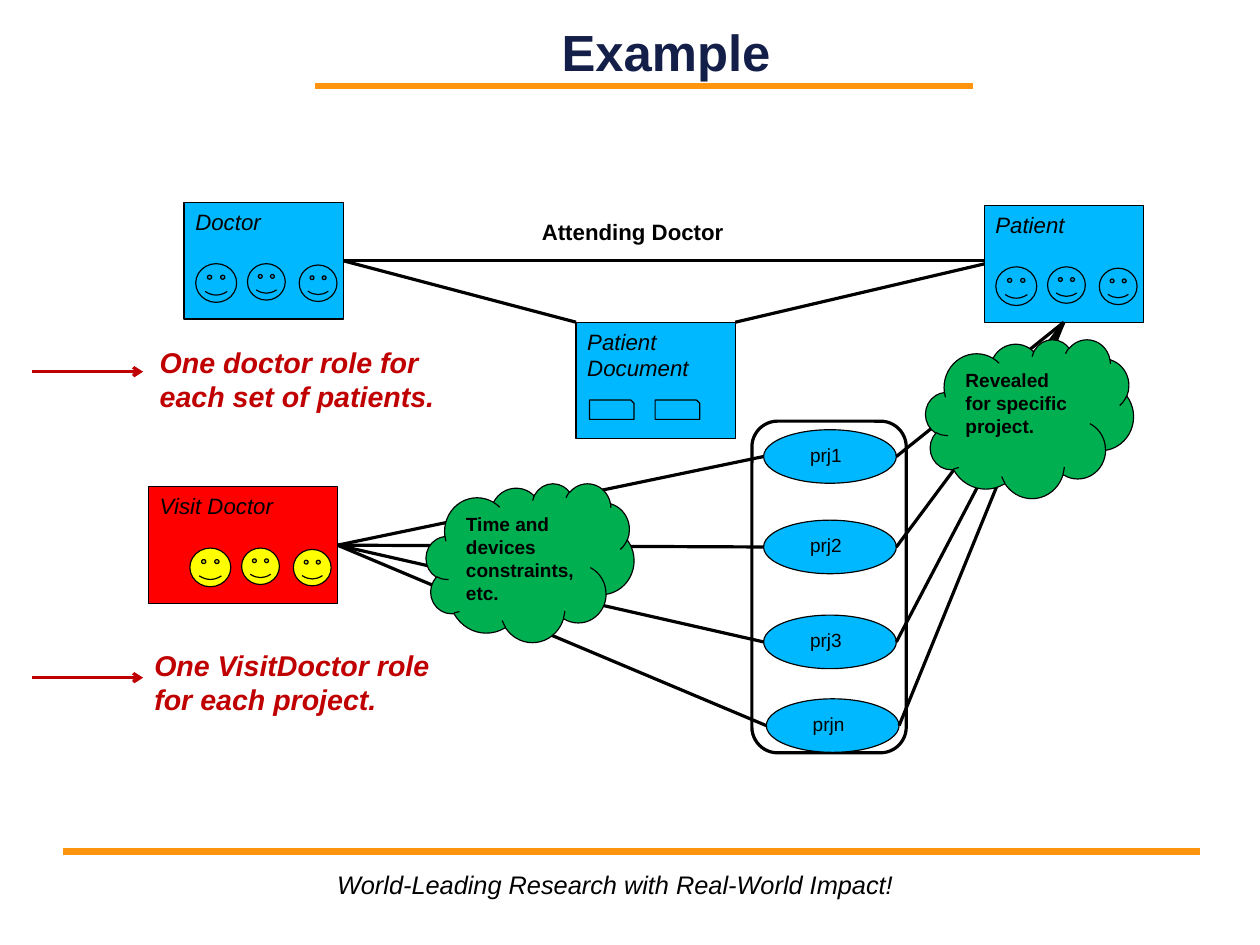
from dataclasses import dataclass
from typing import Optional

import pptx
import pptx.dml.color
import pptx.enum.shapes
import pptx.enum.text
import pptx.util
from lxml import etree
from pptx.oxml.ns import qn

Cm = pptx.util.Cm
SHAPE = pptx.enum.shapes.MSO_SHAPE
ANCHOR = pptx.enum.text.MSO_ANCHOR
ALIGN = pptx.enum.text.PP_ALIGN


# Colours, type sizes and line widths
@dataclass(frozen=True)
class Theme:
    font: str = "Arial"
    ink: str = "000000"
    navy: str = "131F49"
    orange: str = "FF950E"
    blue: str = "00B8FF"
    red: str = "FF0000"
    yellow: str = "FFFF00"
    green: str = "00B050"
    note: str = "C00000"
    title_size: int = 32
    note_size: int = 18
    slogan_size: int = 16
    role_size: int = 14
    detail_size: int = 12
    outline: float = 0.75
    link: float = 2
    rule: float = 4.31


THEME = Theme()


@dataclass(frozen=True)
class Style:
    size: int
    color: str = THEME.ink
    bold: bool = False
    italic: bool = False


@dataclass(frozen=True)
class Box:
    left: float
    top: float
    width: float
    height: float

    @property
    def right(self) -> float:
        return self.left + self.width

    @property
    def middle(self) -> float:
        return self.top + self.height / 2


@dataclass(frozen=True)
class Role:
    label: str
    box: Box
    fill: str
    face_fill: Optional[str] = None


@dataclass(frozen=True)
class Caption:
    text: str
    box: Box
    style: Style
    wrap: bool = True


ROLE_STYLE = Style(THEME.role_size, italic=True)
PROJECT_STYLE = Style(THEME.detail_size)
CLOUD_STYLE = Style(THEME.detail_size, bold=True)
NOTE_STYLE = Style(THEME.note_size, THEME.note, bold=True, italic=True)

# Role boxes
DOCTOR = Role("Doctor", Box(4.09, 4.5, 3.54, 2.59), THEME.blue, THEME.blue)
PATIENT = Role("Patient", Box(21.87, 4.57, 3.54, 2.59), THEME.blue, THEME.blue)
DOCUMENT = Role("Patient Document", Box(12.8, 7.16, 3.54, 2.59), THEME.blue)
VISIT_DOCTOR = Role("Visit Doctor", Box(3.3, 10.82, 4.2, 2.59), THEME.red, THEME.yellow)

# Faces are measured from the top right corner of their role box
FACES = [Box(-3.28, 1.36, 0.91, 0.86), Box(-2.13, 1.36, 0.84, 0.81), Box(-0.98, 1.39, 0.84, 0.81)]
PAGES = [Box(left, 1.73, 0.99, 0.43) for left in (0.3, 1.76)]

PROJECTS = {
    "prj1": Box(16.97, 9.55, 2.95, 1.19),
    "prj2": Box(16.97, 11.56, 2.95, 1.19),
    "prj3": Box(16.97, 13.67, 2.95, 1.19),
    "prjn": Box(17.03, 15.53, 2.95, 1.19),
}
PROJECT_FRAME = Box(16.71, 9.36, 3.43, 7.37)

CLOUDS = {
    "Time and devices constraints, etc.": Box(9.47, 10.74, 4.62, 3.53),
    "Revealed for specific project.": Box(20.57, 7.54, 4.62, 3.53),
}

CAPTIONS = [
    Caption("Attending Doctor", Box(11.79, 4.72, 6.71, 0.99), Style(THEME.role_size, bold=True)),
    Caption("One doctor role for each set of patients.", Box(3.3, 7.54, 6.68, 1.5), NOTE_STYLE),
    Caption("One VisitDoctor role for each project.", Box(3.18, 14.27, 6.68, 1.5), NOTE_STYLE),
    Caption("World-Leading Research with Real-World Impact!", Box(7.24, 19.18, 12.9, 0.94),
            Style(THEME.slogan_size, italic=True), wrap=False),
]


def rgb(value: str) -> pptx.dml.color.RGBColor:
    return pptx.dml.color.RGBColor.from_string(value)


def write(frame, text: str, style: Style, align=ALIGN.LEFT, anchor=ANCHOR.TOP) -> None:
    frame.text = text
    frame.vertical_anchor = anchor
    paragraph = frame.paragraphs[0]
    paragraph.alignment = align
    font = paragraph.runs[0].font
    font.name, font.size = THEME.font, pptx.util.Pt(style.size)
    font.bold, font.italic = style.bold, style.italic
    font.color.rgb = rgb(style.color)


def draw_shape(slide, kind, box: Box, fill: Optional[str], line: float = THEME.outline):
    shape = slide.shapes.add_shape(kind, Cm(box.left), Cm(box.top), Cm(box.width), Cm(box.height))
    shape.shadow.inherit = False
    if fill is None:
        shape.fill.background()
    else:
        shape.fill.solid()
        shape.fill.fore_color.rgb = rgb(fill)
    shape.line.color.rgb = rgb(THEME.ink)
    shape.line.width = pptx.util.Pt(line)
    return shape


def draw_line(slide, start: tuple[float, float], end: tuple[float, float],
              color: str = THEME.ink, width: float = THEME.link, arrow: bool = False):
    line = slide.shapes.add_connector(
        pptx.enum.shapes.MSO_CONNECTOR.STRAIGHT, Cm(start[0]), Cm(start[1]), Cm(end[0]), Cm(end[1]))
    line.line.color.rgb = rgb(color)
    line.line.width = pptx.util.Pt(width)
    if arrow:
        etree.SubElement(line.line._get_or_add_ln(), qn("a:tailEnd"), type="arrow")
    etree.SubElement(line._element.spPr, qn("a:effectLst"))
    return line


def draw_role(slide, role: Role):
    shape = draw_shape(slide, SHAPE.RECTANGLE, role.box, role.fill)
    write(shape.text_frame, role.label, ROLE_STYLE)
    if role.face_fill:
        icon, parts, origin, fill = SHAPE.SMILEY_FACE, FACES, role.box.right, role.face_fill
    else:
        icon, parts, origin, fill = SHAPE.SNIP_1_RECTANGLE, PAGES, role.box.left, role.fill
    for part in parts:
        place = Box(origin + part.left, role.box.top + part.top, part.width, part.height)
        draw_shape(slide, icon, place, fill)
    return shape


def main() -> None:
    deck = pptx.Presentation()
    deck.slide_width, deck.slide_height = Cm(28), Cm(21)
    slide = deck.slides.add_slide(deck.slide_layouts[5])

    # Title and orange rules
    title = slide.shapes.title
    title.left, title.top, title.width, title.height = Cm(7.59), Cm(0.18), Cm(14.43), Cm(1.9)
    frame = title.text_frame
    frame.margin_left = frame.margin_right = frame.margin_top = frame.margin_bottom = 0
    write(frame, "Example", Style(THEME.title_size, THEME.navy, bold=True), ALIGN.CENTER, ANCHOR.MIDDLE)
    for left, right, y in ((7.01, 21.62, 1.91), (1.4, 26.67, 18.92)):
        draw_line(slide, (left, y), (right, y), THEME.orange, THEME.rule)

    # Roles and the document they share
    doctor, patient, _, visit_doctor = [
        draw_role(slide, role) for role in (DOCTOR, PATIENT, DOCUMENT, VISIT_DOCTOR)]
    doctor_side = (DOCTOR.box.right, DOCTOR.box.middle)
    patient_side = (PATIENT.box.left, PATIENT.box.middle)
    attending = draw_line(slide, doctor_side, (PATIENT.box.left, DOCTOR.box.middle))
    writes = draw_line(slide, doctor_side, (DOCUMENT.box.left, DOCUMENT.box.top))
    for link in (attending, writes):
        link.begin_connect(doctor, 3)
    concerns = draw_line(slide, (DOCUMENT.box.right, DOCUMENT.box.top), patient_side)
    concerns.end_connect(patient, 1)

    # Projects, each linked to the visit doctor and the patient
    draw_shape(slide, SHAPE.ROUNDED_RECTANGLE, PROJECT_FRAME, None, THEME.link)
    for name, box in PROJECTS.items():
        project = draw_shape(slide, SHAPE.OVAL, box, THEME.blue)
        project.text_frame.margin_left = Cm(0.6)
        write(project.text_frame, name, PROJECT_STYLE)
        visit = draw_line(slide, (VISIT_DOCTOR.box.right, VISIT_DOCTOR.box.middle), (box.left, box.middle))
        visit.begin_connect(visit_doctor, 3)
        reveal = draw_line(slide, (box.right, box.middle), patient_side)
        reveal.end_connect(patient, 2)

    # Constraint clouds
    for text, box in CLOUDS.items():
        write(draw_shape(slide, SHAPE.CLOUD, box, THEME.green).text_frame, text, CLOUD_STYLE)

    # Captions and the arrows pointing at the notes
    for caption in CAPTIONS:
        box = caption.box
        label = slide.shapes.add_textbox(Cm(box.left), Cm(box.top), Cm(box.width), Cm(box.height))
        label.text_frame.word_wrap = caption.wrap
        write(label.text_frame, caption.text, caption.style)
    for y in (8.26, 15.06):
        draw_line(slide, (0.71, y), (3.18, y), THEME.note, arrow=True)

    deck.save("out.pptx")


if __name__ == "__main__":
    main()
